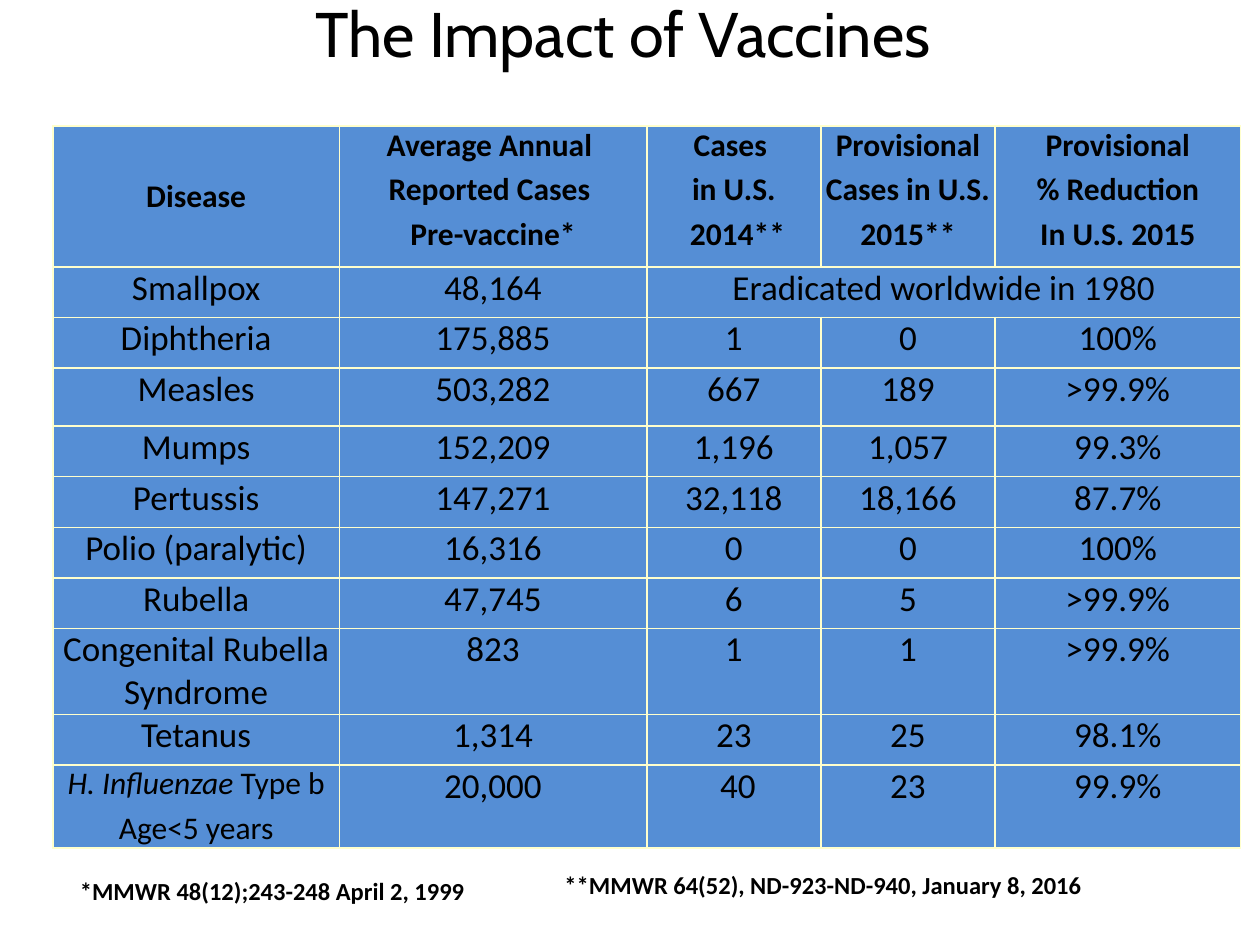
import lxml.etree
import pptx
import pptx.dml.color
import pptx.enum.text
import pptx.oxml
import pptx.oxml.ns
import pptx.util

Cm, Pt = pptx.util.Cm, pptx.util.Pt
CENTER = pptx.enum.text.PP_ALIGN.CENTER
MIDDLE = pptx.enum.text.MSO_ANCHOR.MIDDLE
BLACK, BLUE, CREAM = "000000", "558ED5", "FFFFCC"


def color(value):
    return pptx.dml.color.RGBColor.from_string(value)


def add_run(paragraph, text, **formats):
    """Append text in black Calibri unless formats says otherwise."""
    run = paragraph.add_run()
    run.text = text
    for name, value in {"name": "Calibri", "bold": False, **formats}.items():
        setattr(run.font, name, value)
    run.font.color.rgb = color(BLACK)


presentation = pptx.Presentation()
presentation.slide_width, presentation.slide_height = Cm(25.4), Cm(19.05)
slide = presentation.slides.add_slide(presentation.slide_layouts[6])

# Table of cases before and after vaccines
column_widths = [5.77, 6.2, 3.51, 3.51, 4.95]
row_heights = [2.84, 1.02, 1.02, 1.17, 1.02, 1.02, 1.02, 1.02, 1.68, 1.02, 1.65]
rows = [
    ["Disease", "Average Annual \nReported Cases \nPre-vaccine*", "Cases \nin U.S.\n 2014**",
     "Provisional\nCases in U.S.\n2015**", "Provisional\n% Reduction\nIn U.S. 2015"],
    ["Smallpox", "48,164", "Eradicated worldwide in 1980"],
    ["Diphtheria", "175,885", "1", "0", "100%"],
    ["Measles", "503,282", "667", "189", ">99.9%"],
    ["Mumps", "152,209", "1,196", "1,057", "99.3%"],
    ["Pertussis", "147,271", "32,118", "18,166", "87.7%"],
    ["Polio (paralytic)", "16,316", "0", "0", "100%"],
    ["Rubella", "47,745", "6", "5", ">99.9%"],
    ["Congenital Rubella Syndrome", "823", "1", "1", ">99.9%"],
    ["Tetanus", "1,314", "23", "25", "98.1%"],
    ["H. Influenzae Type b\nAge<5 years", "20,000", " 40", "23", "99.9%"],
]
species = "H. Influenzae "

table = slide.shapes.add_table(
    len(rows), len(column_widths), Cm(1.07), Cm(2.54),
    Cm(sum(column_widths)), Cm(sum(row_heights))).table
table.first_row = table.horz_banding = False
for column, width in zip(table.columns, column_widths):
    column.width = Cm(width)
for row, height in zip(table.rows, row_heights):
    row.height = Cm(height)
table.cell(1, 2).merge(table.cell(1, 4))
table.cell(0, 0).vertical_anchor = MIDDLE

for row_index, texts in enumerate(rows):
    for column_index in range(len(column_widths)):
        cell = table.cell(row_index, column_index)
        for side in ("left", "right", "top", "bottom"):
            setattr(cell, f"margin_{side}", 0)
        cell.fill.solid()
        cell.fill.fore_color.rgb = color(BLUE)
        properties = cell._tc.get_or_add_tcPr()
        for position, edge in enumerate(("lnL", "lnR", "lnT", "lnB")):
            properties.insert(position, pptx.oxml.parse_xml(
                f'<a:{edge} {pptx.oxml.ns.nsdecls("a")} w="12700"><a:solidFill>'
                f'<a:srgbClr val="{CREAM}"/></a:solidFill></a:{edge}>'))
        if cell.is_spanned:
            continue
        text = texts[column_index]
        size = 18 if row_index == 0 or text.startswith(species) else 20
        for line_index, line in enumerate(text.split("\n")):
            frame = cell.text_frame
            paragraph = frame.add_paragraph() if line_index else frame.paragraphs[0]
            paragraph.alignment = CENTER
            paragraph.space_before = Pt(0.2 * size)
            if line.startswith(species):
                add_run(paragraph, species, size=Pt(size), italic=True)
                line = line[len(species):]
            add_run(paragraph, line, size=Pt(size), bold=row_index == 0)

# Title and sources: box, insets, alignment, text, font
text_boxes = [
    ((2.54, -0.23, 20.32, 1.8), {}, CENTER, "The Impact of Vaccines ",
     {"name": "Cabin", "size": Pt(36)}),
    ((1.07, 17.42, 9.53, 1.63), {"margin_left": Cm(0.54), "margin_top": Cm(0.24)}, None,
     "*MMWR 48(12);243-248 April 2, 1999", {"size": Pt(14), "bold": True}),
    ((11.13, 17.42, 11, 0.86), {}, None,
     "**MMWR 64(52), ND-923-ND-940, January 8, 2016", {"size": Pt(14), "bold": True}),
]
for box, insets, alignment, text, formats in text_boxes:
    frame = slide.shapes.add_textbox(*map(Cm, box)).text_frame
    for name, value in {"word_wrap": True, **insets}.items():
        setattr(frame, name, value)
    frame.paragraphs[0].alignment = alignment
    add_run(frame.paragraphs[0], text, **formats)

presentation.save("out.pptx")
